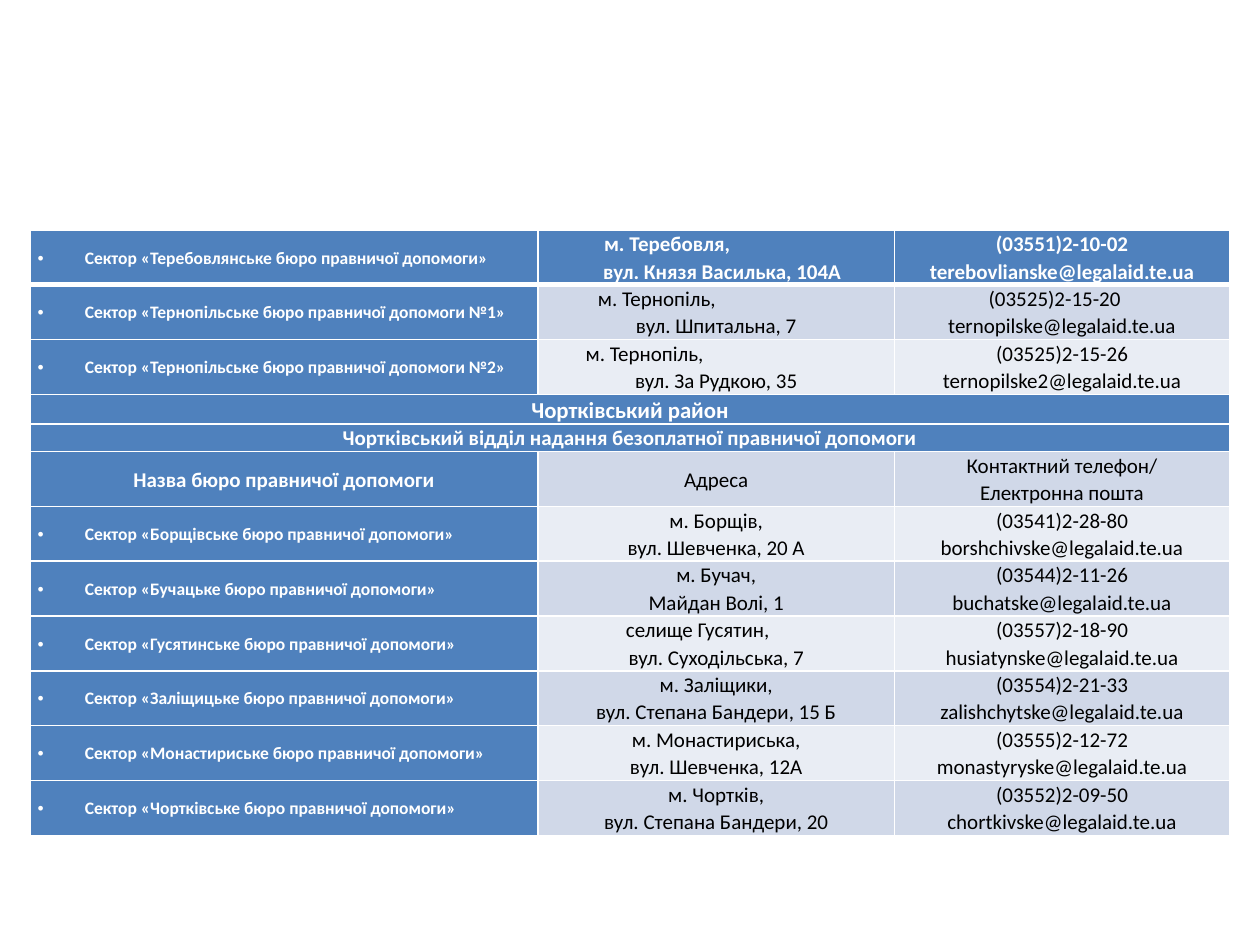
from lxml import etree
from pptx import Presentation
from pptx.dml.color import RGBColor
from pptx.enum import text
from pptx.oxml import ns
from pptx.util import Pt

FONT = "Calibri"
WHITE, BLACK, BLUE = "FFFFFF", "000000", "4F81BD"
BANDS = ("E9EDF4", "D0D8E8")
COLUMN_WIDTHS = (290.2, 203.8, 191.5)
TALL_ROW = 28.8
BULLET_INDENT = 27

# Each cell is a list of lines; a (line, indent) pair is set from the left
# instead of being centred. A row with one cell runs across the table.
ROWS = [
    (["Сектор «Теребовлянське бюро правничої допомоги»"],
     [("м. Теребовля,", 33.5), ("вул. Князя Василька, 104А", 33)],
     ["(03551)2-10-02", "terebovlianske@legalaid.te.ua"]),
    (["Сектор «Тернопільське бюро правничої допомоги №1»"],
     [("м. Тернопіль,", 30), "вул. Шпитальна, 7"],
     [("(03525)2-15-20", 49.5), "ternopilske@legalaid.te.ua"]),
    (["Сектор «Тернопільське бюро правничої допомоги №2»"],
     [("м. Тернопіль,", 23), "вул. За Рудкою, 35"],
     ["(03525)2-15-26", "ternopilske2@legalaid.te.ua"]),
    (["Чортківський район"],),
    (["Чортківський відділ надання безоплатної правничої допомоги"],),
    (["Назва бюро правничої допомоги"],
     ["Адреса"],
     ["Контактний телефон/", "Електронна пошта"]),
    (["Сектор «Борщівське бюро правничої допомоги»"],
     ["м. Борщів,", "вул. Шевченка, 20 А"],
     ["(03541)2-28-80", "borshchivske@legalaid.te.ua"]),
    (["Сектор «Бучацьке бюро правничої допомоги»"],
     ["м. Бучач,", "Майдан Волі, 1"],
     ["(03544)2-11-26", "buchatske@legalaid.te.ua"]),
    (["Сектор «Гусятинське бюро правничої допомоги»"],
     [("селище Гусятин,", 46), "вул. Суходільська, 7"],
     ["(03557)2-18-90", "husiatynske@legalaid.te.ua"]),
    (["Сектор «Заліщицьке бюро правничої допомоги»"],
     ["м. Заліщики,", "вул. Степана Бандери, 15 Б"],
     ["(03554)2-21-33", "zalishchytske@legalaid.te.ua"]),
    (["Сектор «Монастириське бюро правничої допомоги»"],
     ["м. Монастириська,", "вул. Шевченка, 12А"],
     ["(03555)2-12-72", "monastyryske@legalaid.te.ua"]),
    (["Сектор «Чортківське бюро правничої допомоги»"],
     ["м. Чортків,", "вул. Степана Бандери, 20"],
     ["(03552)2-09-50", "chortkivske@legalaid.te.ua"]),
]
DISTRICT_ROW, DEPARTMENT_ROW, HEADING_ROW = 3, 4, 5
SHORT_ROWS = {DISTRICT_ROW: 15.8, DEPARTMENT_ROW: 14.4}


def color(value):
    return RGBColor.from_string(value)


def set_borders(cell, row):
    """Draw white cell edges, with a thick one under the first row."""
    properties = cell._tc.get_or_add_tcPr()
    thick_edge = {0: "B", 1: "T"}.get(row)
    for side in "LRTB":
        width = Pt(3 if side == thick_edge else 1)
        line = etree.SubElement(properties, ns.qn(f"a:ln{side}"), w=str(width))
        fill = etree.SubElement(line, ns.qn("a:solidFill"))
        etree.SubElement(fill, ns.qn("a:srgbClr"), val=WHITE)


def set_bullet(paragraph):
    properties = paragraph._p.get_or_add_pPr()
    properties.set("marL", str(Pt(BULLET_INDENT)))
    properties.set("indent", str(-Pt(BULLET_INDENT)))
    etree.SubElement(properties, ns.qn("a:buFont"), typeface="Arial")
    etree.SubElement(properties, ns.qn("a:buChar"), char="•")
    paragraph.alignment = text.PP_ALIGN.JUSTIFY


def set_indent(paragraph, indent):
    properties = paragraph._p.get_or_add_pPr()
    properties.set("marL", str(Pt(indent)))
    properties.set("indent", "0")
    paragraph.alignment = text.PP_ALIGN.LEFT


def write_lines(cell, lines, size, ink, bold, bulleted):
    pairs = [line if isinstance(line, tuple) else (line, None) for line in lines]
    cell.text_frame.text = "\n".join(line for line, _ in pairs)
    for paragraph, (_, indent) in zip(cell.text_frame.paragraphs, pairs):
        paragraph.line_spacing = 1.07
        paragraph.alignment = text.PP_ALIGN.CENTER
        if bulleted:
            set_bullet(paragraph)
        elif indent is not None:
            set_indent(paragraph, indent)
        for span in paragraph.runs:
            span.font.name = FONT
            span.font.size = Pt(size)
            span.font.bold = bold
            span.font.color.rgb = color(ink)


def format_cell(cell, row, fill):
    cell.margin_left = cell.margin_right = Pt(4.3)
    cell.margin_top = cell.margin_bottom = 0
    cell.vertical_anchor = text.MSO_ANCHOR.MIDDLE
    set_borders(cell, row)
    cell.fill.solid()
    cell.fill.fore_color.rgb = color(fill)


def add_contacts_table(page):
    heights = [SHORT_ROWS.get(row, TALL_ROW) for row in range(len(ROWS))]
    frame = page.shapes.add_table(
        len(ROWS), len(COLUMN_WIDTHS), Pt(17.2), Pt(131.4),
        Pt(sum(COLUMN_WIDTHS)), Pt(sum(heights)))
    table = frame.table
    table.first_row = table.horz_banding = False
    for column, width in zip(table.columns, COLUMN_WIDTHS):
        column.width = Pt(width)

    for row, contents in enumerate(ROWS):
        table.rows[row].height = Pt(heights[row])
        full_width = len(contents) == 1
        if full_width:
            table.cell(row, 0).merge(table.cell(row, len(COLUMN_WIDTHS) - 1))
        for column in range(len(COLUMN_WIDTHS)):
            strong = row == 0 or column == 0 or full_width
            cell = table.cell(row, column)
            format_cell(cell, row, BLUE if strong else BANDS[row % 2])
            if column < len(contents):
                bulleted = (column == 0 and not full_width
                            and row != HEADING_ROW)
                size = 10 if bulleted else 13 if row == DISTRICT_ROW else 12
                write_lines(cell, contents[column], size,
                            WHITE if strong else BLACK, strong, bulleted)


def main():
    deck = Presentation()
    deck.slide_width, deck.slide_height = Pt(720), Pt(540)
    page = deck.slides.add_slide(deck.slide_layouts[6])
    add_contacts_table(page)
    deck.save("out.pptx")


if __name__ == "__main__":
    main()
